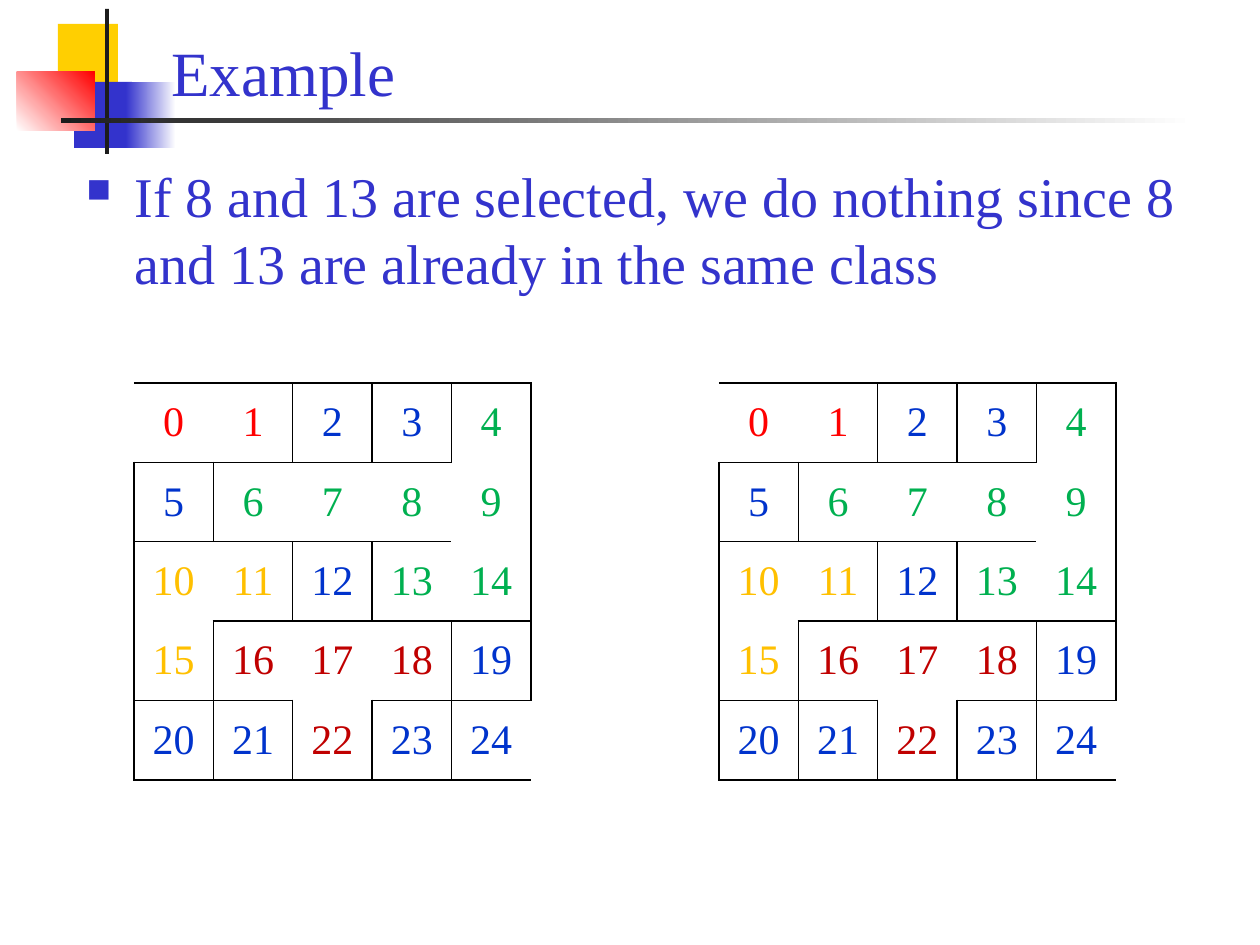
from lxml.etree import SubElement
from pptx import Presentation
from pptx.dml.color import RGBColor
from pptx.enum.shapes import MSO_SHAPE
from pptx.enum.text import MSO_ANCHOR, PP_ALIGN
from pptx.oxml.ns import qn
from pptx.util import Pt

EMU_PER_PX = 914400 / 126
FONT = "Times New Roman"
INDIGO, BLACK = "3333CC", "000000"

TITLE = "Example"
BODY = "If 8 and 13 are selected, we do nothing since 8 and 13 are already in the same class"

# Decoration: left, top, width, height, colours (two make a gradient), angle
DECORATION = [
    (58, 24, 60, 65, ["FFCF01"], 0),
    (74, 82, 58, 66, [INDIGO], 0),
    (126, 82, 50, 66, [INDIGO, "FFFFFF"], 0),
    (17, 72, 78, 59, ["FFFFFF", "FF0000"], 45),
    (105, 9, 4, 145, ["1C1C1C"], 0),
    (61, 118, 1134, 5, ["1C1C1C", "FFFFFF"], 0),
]

# Maze: each letter is a class of joined cells, a dot is a cell on its own
CLASSES = ["RR..G", ".GGGG", "YY.GG", "YDDD.", "..D.."]
CLASS_COLORS = {"R": "FF0000", "G": "00B050", "Y": "FFC000", "D": "C00000", ".": "0033CC"}
KEPT_WALLS = [{8, 13}]               # same class, wall still standing
OPENINGS = {(0, "L"), (24, "R")}     # entrance and exit
SIDES = {"L": (0, -1), "R": (0, 1), "T": (-1, 0), "B": (1, 0)}
SIZE = len(CLASSES)
MAZE_LEFTS, MAZE_TOP, MAZE_WIDTH = (719, 134), 383, 397


def px(value):
    return round(value * EMU_PER_PX)


def color(hex_string):
    return RGBColor.from_string(hex_string)


def add_run(paragraph, text, size, hex_string):
    run = paragraph.add_run()
    run.text = text
    run.font.name = FONT
    run.font.size = Pt(size)
    run.font.color.rgb = color(hex_string)


def add_decoration(slide, left, top, width, height, colors, angle):
    shape = slide.shapes.add_shape(MSO_SHAPE.RECTANGLE, px(left), px(top), px(width), px(height))
    shape.shadow.inherit = False
    shape.line.fill.background()
    if len(colors) == 1:
        shape.fill.solid()
        shape.fill.fore_color.rgb = color(colors[0])
        return
    shape.fill.gradient()
    shape.fill.gradient_angle = angle
    for stop, hex_string in zip(shape.fill.gradient_stops, colors):
        stop.color.rgb = color(hex_string)


def add_text(slide, left, top, width, height, text, size, anchor):
    box = slide.shapes.add_textbox(px(left), px(top), px(width), px(height))
    box.text_frame.word_wrap = True
    box.text_frame.vertical_anchor = anchor
    paragraph = box.text_frame.paragraphs[0]
    add_run(paragraph, text, size, INDIGO)
    return paragraph


def add_bullet(paragraph, indent):
    properties = paragraph._p.get_or_add_pPr()
    properties.set("marL", str(px(indent)))
    properties.set("indent", str(-px(indent)))
    bullet_color = SubElement(properties, qn("a:buClr"))
    SubElement(bullet_color, qn("a:srgbClr"), val=INDIGO)
    SubElement(properties, qn("a:buSzPct"), val="60000")
    SubElement(properties, qn("a:buChar"), char="■")


def has_wall(row, column, side):
    number = row * SIZE + column
    next_row, next_column = row + SIDES[side][0], column + SIDES[side][1]
    if not (0 <= next_row < SIZE and 0 <= next_column < SIZE):
        return (number, side) not in OPENINGS
    own, other = CLASSES[row][column], CLASSES[next_row][next_column]
    return own == "." or own != other or {number, next_row * SIZE + next_column} in KEPT_WALLS


def set_border(cell, side, visible):
    line = SubElement(cell._tc.get_or_add_tcPr(), qn(f"a:ln{side}"), w=str(Pt(1)))
    if visible:
        fill = SubElement(line, qn("a:solidFill"))
        SubElement(fill, qn("a:srgbClr"), val=BLACK)
    else:
        SubElement(line, qn("a:noFill"))


def add_maze(slide, left):
    side_length = px(MAZE_WIDTH)
    table = slide.shapes.add_table(SIZE, SIZE, px(left), px(MAZE_TOP), side_length, side_length).table
    table.first_row = table.horz_banding = False
    for row, letters in enumerate(CLASSES):
        for column, letter in enumerate(letters):
            cell = table.cell(row, column)
            cell.vertical_anchor = MSO_ANCHOR.MIDDLE
            paragraph = cell.text_frame.paragraphs[0]
            paragraph.alignment = PP_ALIGN.CENTER
            add_run(paragraph, str(row * SIZE + column), 24, CLASS_COLORS[letter])
            for side in SIDES:
                set_border(cell, side, has_wall(row, column, side))
            cell.fill.background()


def main():
    presentation = Presentation()
    presentation.slide_width, presentation.slide_height = px(1260), px(945)
    slide = presentation.slides.add_slide(presentation.slide_layouts[6])

    for part in DECORATION:
        add_decoration(slide, *part)

    # Title and bullet
    add_text(slide, 159, 20, 1074, 95, TITLE, 36, MSO_ANCHOR.BOTTOM)
    bullet = add_text(slide, 74, 155, 1152, 753, BODY, 32, MSO_ANCHOR.TOP)
    bullet.space_before = Pt(6.4)
    add_bullet(bullet, 48)

    # Mazes before and after the selection
    for left in MAZE_LEFTS:
        add_maze(slide, left)

    presentation.save("out.pptx")


if __name__ == "__main__":
    main()
